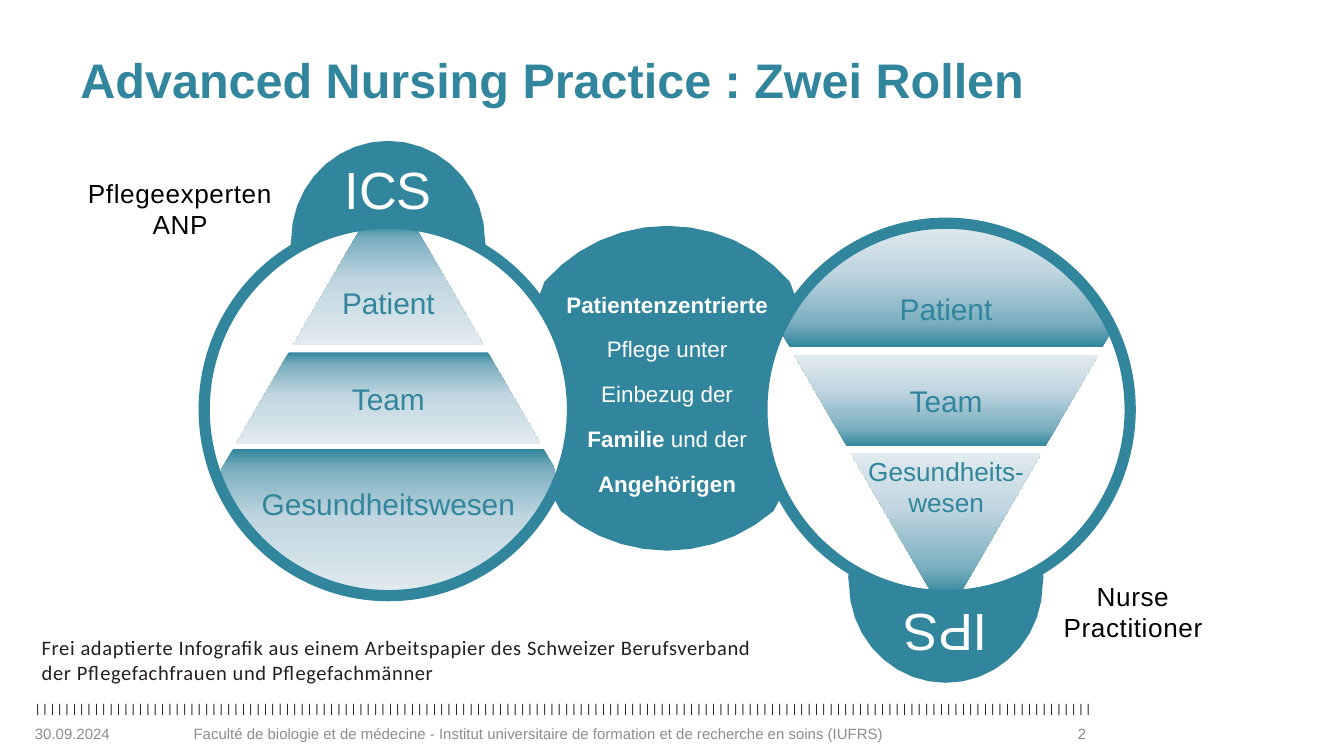
from copy import deepcopy
from dataclasses import dataclass
from math import acos, cos, pi, radians, sin, sqrt, tan

from pptx import Presentation
from pptx.dml.color import RGBColor
from pptx.enum.shapes import MSO_SHAPE
from pptx.enum.text import MSO_ANCHOR, PP_ALIGN
from pptx.oxml.ns import qn
from pptx.util import Cm, Pt

LEFT, CENTER, RIGHT = PP_ALIGN.LEFT, PP_ALIGN.CENTER, PP_ALIGN.RIGHT
MIDDLE, TOP = MSO_ANCHOR.MIDDLE, MSO_ANCHOR.TOP
OVAL = MSO_SHAPE.OVAL


@dataclass(frozen=True)
class Theme:
    teal: str = "31859C"
    white: str = "FFFFFF"
    black: str = "000000"
    source: str = "251E20"
    footer: str = "8C8C8C"
    tints: tuple = ("31859C", "79AEBE", "C1D6E0", "E1EBEF")
    body: str = "Arial"
    alternate: str = "Calibri"
    title_size: float = 26
    cap_size: float = 28
    band_size: float = 16
    label_size: float = 14
    lens_size: float = 12
    source_size: float = 11
    footer_size: float = 8
    rule_size: float = 6.8
    outline: float = 6


THEME = Theme()
STANDARD = (0.25, 0.13, 0.25, 0.13)


def style_runs(paragraph, size, color, font, bold=False, spacing=0):
    for run in paragraph.runs:
        run.font.size = Pt(size)
        run.font.name = font
        run.font.bold = bold
        run.font.color.rgb = RGBColor.from_string(color)
        if spacing:
            run._r.get_or_add_rPr().set("spc", str(round(spacing * 100)))


def prepare_frame(frame, margins=STANDARD, anchor=MIDDLE):
    frame.word_wrap = True
    frame.vertical_anchor = anchor
    (frame.margin_left, frame.margin_top,
     frame.margin_right, frame.margin_bottom) = map(Cm, margins)


def write(shape, text, size, color, align=CENTER, margins=STANDARD, anchor=MIDDLE,
          font=THEME.body, leading=None, **style):
    prepare_frame(shape.text_frame, margins, anchor)
    shape.text_frame.text = text
    paragraph = shape.text_frame.paragraphs[0]
    paragraph.alignment = align
    if leading:
        paragraph.line_spacing = Pt(leading)
    style_runs(paragraph, size, color, font, **style)


def add_text(slide, box, text, size, color, **options):
    write(slide.shapes.add_textbox(*map(Cm, box)), text, size, color, **options)


def add_outline(slide, points):
    corners = [(Cm(x), Cm(y)) for x, y in points]
    builder = slide.shapes.build_freeform(*corners[0], scale=1.0)
    builder.add_line_segments(corners[1:], close=True)
    shape = builder.convert_to_shape()
    shape.shadow.inherit = False
    shape.line.fill.background()
    return shape


def fill_solid(shape, color):
    shape.fill.solid()
    shape.fill.fore_color.rgb = RGBColor.from_string(color)


def fill_gradient(shape, positions, angle):
    shape.fill.gradient()
    shape.fill.gradient_angle = angle
    stop_list = shape._element.spPr.find(qn("a:gradFill")).find(qn("a:gsLst"))
    while len(stop_list) < len(positions):
        stop_list.append(deepcopy(stop_list[0]))
    for stop, position, tint in zip(shape.fill.gradient_stops, positions, THEME.tints):
        stop.position = position
        stop.color.rgb = RGBColor.from_string(tint)


def draw_line(shape, color):
    shape.line.color.rgb = RGBColor.from_string(color)
    shape.line.width = Pt(THEME.outline)


def arc(cx, cy, rx, ry, start, end, steps):
    angles = [radians(start + (end - start) * i / steps) for i in range(steps + 1)]
    return [(cx + rx * cos(a), cy + ry * sin(a)) for a in angles]


def half_width(y, cy, rx, ry):
    return rx * sqrt(max(0, 1 - ((y - cy) / ry) ** 2))


def mirrored(cx, rows, half):
    right = [(cx + half(y), y) for y in rows]
    left = [(cx - half(y), y) for y in reversed(rows) if half(y) > 0.01]
    return right + left


def curve_rows(cy, radius, top, bottom, steps):
    start, end = (acos(max(-1, min(1, (cy - y) / radius))) for y in (top, bottom))
    return [cy - radius * cos(start + (end - start) * i / steps) for i in range(steps + 1)]


def cap(slide, box, ring_box, name, rotation):
    left, top, width, height = box
    rx, ry = ring_box[2] / 2, ring_box[3] / 2
    cx, shoulder = left + width / 2, top + 1.77
    ring_cy = top + height + ry * cos(pi / 6)
    dome = arc(cx, shoulder, width / 2, shoulder - top, 180, 360, 18)
    seat = arc(cx, ring_cy, rx, ry, 300, 240, 6)
    shape = add_outline(slide, dome + seat)
    fill_solid(shape, THEME.teal)
    draw_line(shape, THEME.teal)
    shape.rotation = rotation
    write(shape, name, THEME.cap_size, THEME.white, margins=(0.25, 0, 0.25, 0.3))


def role(slide, box, cap_box, name, rotation, apex, bands, positions, angle):
    left, top, width, height = box
    cx, cy, rx, ry = left + width / 2, top + height / 2, width / 2, height / 2
    cap(slide, cap_box, box, name, rotation)

    def slope(y):
        return abs(y - top - apex) * tan(pi / 6)

    def half(y):
        return min(slope(y), half_width(y, cy, rx, ry))

    for start, end, label, size, margins, leading in bands:
        edges = [top + start, top + end]
        clipped = any(half(y) < slope(y) for y in edges)
        rows = curve_rows(cy, ry, *edges, steps=12) if clipped else edges
        band = add_outline(slide, mirrored(cx, rows, half))
        fill_gradient(band, positions, angle)
        write(band, label, size, THEME.teal, margins=margins, leading=leading)
    ring = slide.shapes.add_shape(OVAL, *map(Cm, box))
    ring.shadow.inherit = False
    ring.fill.background()
    draw_line(ring, THEME.teal)


def lens(slide, box, ring_box, lines):
    left, top, width, height = box
    cx, cy, radius = left + width / 2, top + height / 2, width / 2
    ring_left, ring_top, ring_width, ring_height = ring_box
    rx, ry = ring_width / 2, ring_height / 2
    distance, ring_cy = cx - ring_left - rx, ring_top + ry

    def half(y):
        return min(half_width(y, cy, radius, height / 2),
                   distance - half_width(y, ring_cy, rx, ry))

    rows = curve_rows(cy, height / 2, top, top + height, steps=22)
    shape = add_outline(slide, mirrored(cx, rows, half))
    fill_solid(shape, THEME.teal)
    prepare_frame(shape.text_frame, (0.2, 0, 0.2, 0.13))
    paragraph = shape.text_frame.paragraphs[0]
    paragraph.alignment = CENTER
    paragraph.line_spacing = Pt(24)
    weights = []
    for index, line in enumerate(lines):
        if index:
            paragraph.add_line_break()
        for words, bold in line:
            paragraph.add_run().text = words
            weights.append(bold)
    style_runs(paragraph, THEME.lens_size, THEME.white, THEME.body)
    for run, bold in zip(paragraph.runs, weights):
        run.font.bold = bold


def footer(slide, box):
    left, top, width, height = box
    add_text(slide, (left, top, width, 0.56), "|" * 144, THEME.rule_size, THEME.black,
             align=LEFT, anchor=TOP, font=THEME.alternate, spacing=0.8)
    faculty = ("Faculté de biologie et de médecine - Institut universitaire "
               "de formation et de recherche en soins (IUFRS)")
    entries = [(0, 2.39, "30.09.2024", LEFT), (14.73, 5.64, "2", RIGHT),
               (3, 14.68, faculty, LEFT)]
    for offset, entry_width, text, align in entries:
        add_text(slide, (left + offset, top + height - 0.76, entry_width, 0.76), text,
                 THEME.footer_size, THEME.footer, align=align)


def main():
    deck = Presentation()
    deck.slide_width, deck.slide_height = Cm(25.4), Cm(14.29)
    slide = deck.slides.add_slide(deck.slide_layouts[6])
    footer(slide, (0.41, 13.11, 20.8, 1.14))
    add_text(slide, (1.27, 0.79, 22.86, 1.4), "Advanced Nursing Practice : Zwei Rollen",
             THEME.title_size, THEME.teal, align=LEFT, margins=(0.25, 0, 0.25, 0), bold=True)
    for box, label in [((1.5, 3.35, 3.81, 1.19), "Pflegeexperten ANP"),
                       ((19.79, 10.97, 3.25, 1.19), "Nurse Practitioner")]:
        add_text(slide, box, label, THEME.label_size, THEME.black,
                 margins=(0, 0, 0, 0), spacing=0.3)

    expert_ring, practitioner_ring = (3.86, 4.22, 6.96, 7.04), (14.4, 4.22, 6.96, 7.04)
    large, small = THEME.band_size, THEME.label_size
    role(slide, expert_ring, (5.61, 2.77, 3.45, 1.9), "ICS", 0, -0.81, [
        (0, 2.31, "Patient", large, (0.25, 0.81, 0.25, 0.13), None),
        (2.44, 4.17, "Team", large, STANDARD, None),
        (4.27, 7.04, "Gesundheitswesen", large, (0.25, 0, 0.25, 0.61), 16.5),
    ], (0, 0.13, 0.47, 1), 270)
    role(slide, practitioner_ring, (16.15, 10.9, 3.45, 1.9), "IPS", 180, 7.46, [
        (0, 2.34, "Patient", large, (0.25, 0.97, 0.25, 0.08), None),
        (2.49, 4.22, "Team", large, STANDARD, None),
        (4.34, 7.04, "Gesundheits-wesen", small, (0.25, 0, 0.25, 1.4), 16.5),
    ], (0, 0.19, 0.62, 1), 90)
    lens(slide, (9.54, 4.27, 6.14, 6.14), expert_ring, [
        [("Patientenzentrierte", True)], [("Pflege unter", False)],
        [("Einbezug der", False)], [("Familie", True), (" und der", False)],
        [("Angehörigen", True)]])
    add_text(slide, (0.66, 11.94, 14.2, 1.07),
             "Frei adaptierte Infografik aus einem Arbeitspapier des Schweizer "
             "Berufsverband der Pflegefachfrauen und Pflegefachmänner",
             THEME.source_size, THEME.source, align=LEFT, font=THEME.alternate,
             margins=(0.13, 0.08, 0.13, 0.08), spacing=0.3)
    deck.save("out.pptx")


if __name__ == "__main__":
    main()
